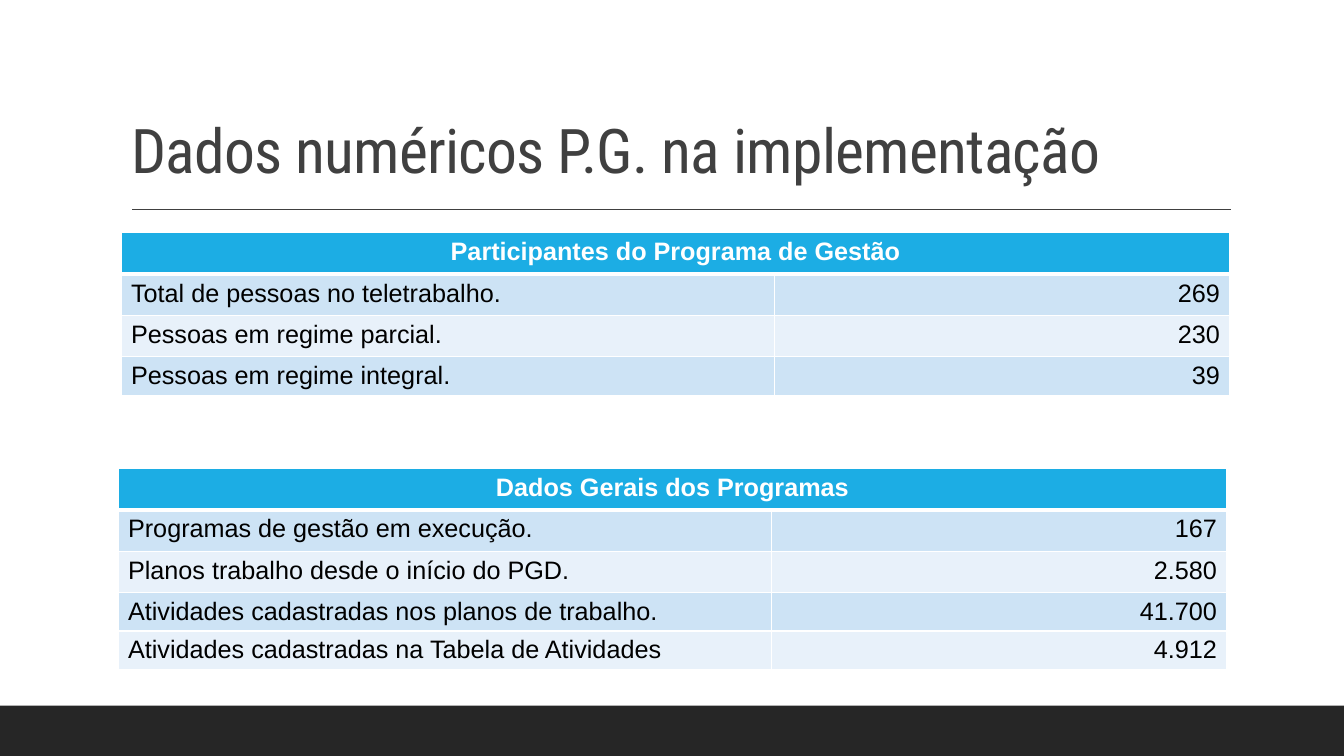
from lxml.etree import SubElement
from pptx import Presentation
from pptx.dml.color import RGBColor
from pptx.enum.shapes import MSO_CONNECTOR, MSO_SHAPE
from pptx.enum.text import MSO_ANCHOR, PP_ALIGN
from pptx.oxml.ns import qn
from pptx.util import Inches, Pt

WHITE, BLACK, DARK, GRAY = "FFFFFF", "000000", "262626", "404040"
HEADER_BLUE = "1CADE4"
BANDS = ("CDE3F5", "E8F1FA")
COLUMN_WIDTHS = (6.48, 4.52)

PARTICIPANTS = [
    ("Total de pessoas no teletrabalho.", "269"),
    ("Pessoas em regime parcial.", "230"),
    ("Pessoas em regime integral.", "39"),
]
PROGRAMS = [
    ("Programas de gestão em execução.", "167"),
    ("Planos trabalho desde o início do PGD.", "2.580"),
    ("Atividades cadastradas nos planos de trabalho.", "41.700"),
    ("Atividades cadastradas na Tabela de Atividades", "4.912"),
]


def color(value):
    return RGBColor.from_string(value)


def write(frame, text, font="Arial", size=18, ink=BLACK, bold=False,
          align=PP_ALIGN.LEFT, line_spacing=None, tracking=None):
    para = frame.paragraphs[0]
    para.alignment = align
    para.line_spacing = line_spacing
    span = para.add_run()
    span.text = text
    span.font.name = font
    span.font.size = Pt(size)
    span.font.bold = bold
    span.font.color.rgb = color(ink)
    if tracking is not None:
        span._r.get_or_add_rPr().set("spc", str(int(tracking * 100)))


def add_title(page, text):
    title = page.shapes.title
    title.left, title.top = Inches(1.2), Inches(0.31)
    title.width, title.height = Inches(11), Inches(1.59)
    title.text_frame.word_wrap = True
    title.text_frame.vertical_anchor = MSO_ANCHOR.BOTTOM
    write(title.text_frame, text, font="Roboto Condensed", size=44, ink=GRAY,
          line_spacing=0.9, tracking=-0.5)


def add_footer_band(page):
    band = page.shapes.add_shape(MSO_SHAPE.RECTANGLE, Inches(0), Inches(7),
                                 Inches(13.33), Inches(0.5))
    band.shadow.inherit = False
    band.fill.solid()
    band.fill.fore_color.rgb = color(DARK)
    band.line.fill.background()


def add_title_rule(page):
    rule = page.shapes.add_connector(MSO_CONNECTOR.STRAIGHT, Inches(1.31), Inches(2.08),
                                     Inches(12.21), Inches(2.08))
    rule.line.color.rgb = color(GRAY)
    rule.line.width = Pt(1)
    SubElement(rule._element.spPr, qn("a:effectLst"))


def style_cell(cell, fill, top=1, bottom=1):
    """Set white borders, with top and bottom widths in points, and the fill."""
    properties = cell._tc.get_or_add_tcPr()
    for side, width in (("L", 1), ("R", 1), ("T", top), ("B", bottom)):
        border = SubElement(properties, qn(f"a:ln{side}"), w=str(Pt(width)))
        solid = SubElement(border, qn("a:solidFill"))
        SubElement(solid, qn("a:srgbClr"), val=WHITE)
    cell.fill.solid()
    cell.fill.fore_color.rgb = color(fill)


def add_data_table(page, left, top, heading, records, heights):
    frame = page.shapes.add_table(len(records) + 1, 2, Inches(left), Inches(top),
                                  Inches(sum(COLUMN_WIDTHS)), Inches(sum(heights)))
    table = frame.table
    for column, width in zip(table.columns, COLUMN_WIDTHS):
        column.width = Inches(width)
    for row, height in zip(table.rows, heights):
        row.height = Inches(height)

    for cell in table.rows[0].cells:
        style_cell(cell, HEADER_BLUE, bottom=3)
    table.cell(0, 0).merge(table.cell(0, 1))
    write(table.cell(0, 0).text_frame, heading, ink=WHITE, bold=True,
          align=PP_ALIGN.CENTER)

    for index, record in enumerate(records):
        for column, text in enumerate(record):
            cell = table.cell(index + 1, column)
            style_cell(cell, BANDS[index % 2], top=1 if index else 3)
            write(cell.text_frame, text,
                  align=PP_ALIGN.RIGHT if column else PP_ALIGN.LEFT)


def main():
    deck = Presentation()
    deck.slide_width, deck.slide_height = Inches(13.33), Inches(7.5)
    page = deck.slides.add_slide(deck.slide_layouts.get_by_name("Title Only"))
    add_footer_band(page)
    add_title_rule(page)
    add_title(page, "Dados numéricos P.G. na implementação")
    add_data_table(page, 1.2, 2.31, "Participantes do Programa de Gestão",
                   PARTICIPANTS, [0.41] * 3 + [0.38])
    add_data_table(page, 1.17, 4.65, "Dados Gerais dos Programas",
                   PROGRAMS, [0.41] * 3 + [0.38] * 2)
    deck.save("out.pptx")


if __name__ == "__main__":
    main()
